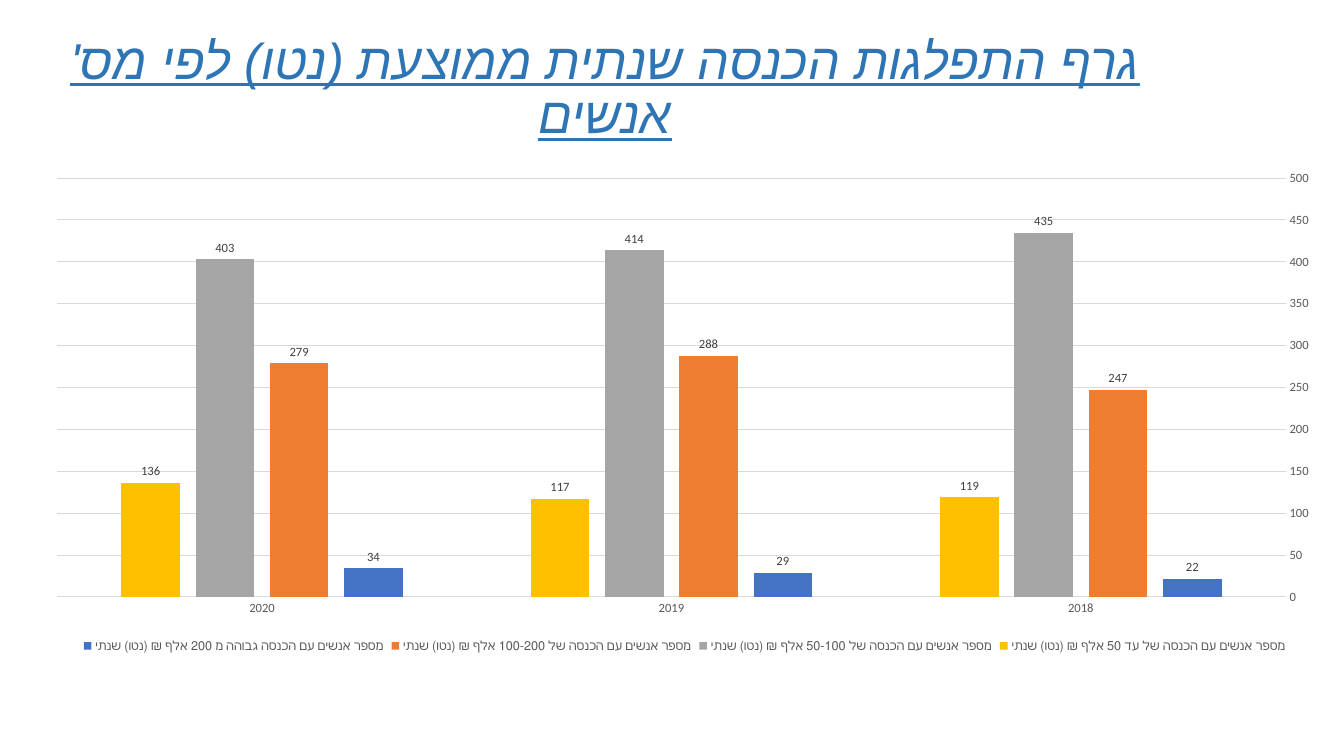
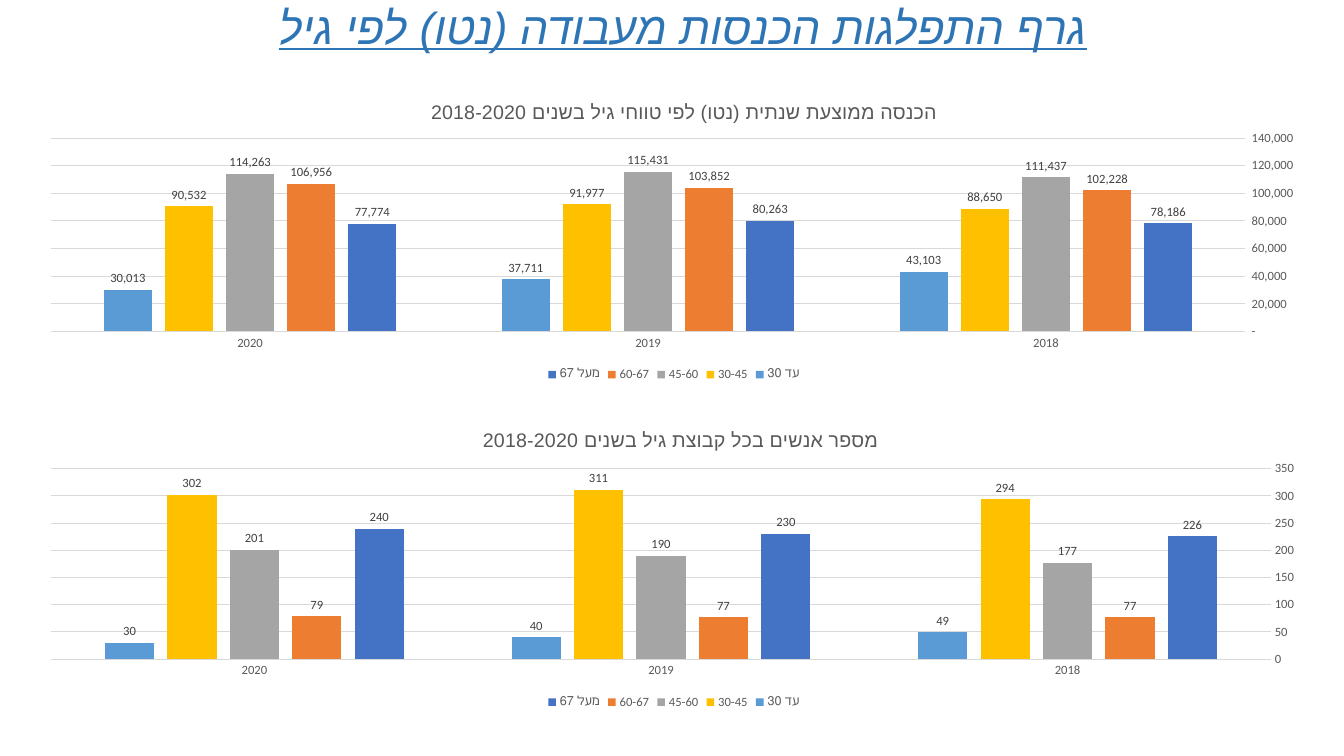
from lxml import etree
from pptx import Presentation
from pptx.chart.data import CategoryChartData
from pptx.dml.color import RGBColor
from pptx.enum.chart import (XL_CHART_TYPE, XL_LABEL_POSITION as LabelPos,
                             XL_LEGEND_POSITION as LegendPos, XL_TICK_MARK as Tick)
from pptx.enum.text import MSO_ANCHOR as Anchor, PP_ALIGN as Align
from pptx.oxml import parse_xml
from pptx.oxml.ns import nsdecls, qn
from pptx.util import Inches, Pt

FONT, HEBREW_FONT = "Calibri", "Arial"
TITLE_BLUE, TEXT_GREY, LABEL_GREY, GRID_GREY = "2E75B6", "595959", "404040", "D9D9D9"
SERIES_COLORS = ["4472C4", "ED7D31", "A5A5A5", "FFC000", "5B9BD5"]
YEARS = ["2018", "2019", "2020"]
AGE_GROUPS = ["מעל 67", "60-67", "45-60", "30-45", "עד 30"]
ACCOUNTING = '_ * #,##0_ ;_ * \\-#,##0_ ;_ * "-"??_ ;_ '

INCOME_COUNTS = {
    "מספר אנשים עם הכנסה גבוהה מ 200 אלף ₪ (נטו) שנתי": (22, 29, 34),
    "מספר אנשים עם הכנסה של 100-200 אלף ₪ (נטו) שנתי": (247, 288, 279),
    "מספר אנשים עם הכנסה של 50-100 אלף ₪ (נטו) שנתי": (435, 414, 403),
    "מספר אנשים עם הכנסה של עד 50 אלף ₪ (נטו) שנתי": (119, 117, 136),
}
AGE_INCOMES = dict(zip(AGE_GROUPS, [
    (78186, 80263, 77774), (102228, 103852, 106956), (111437, 115431, 114263),
    (88650, 91977, 90532), (43103, 37711, 30013)]))
AGE_COUNTS = dict(zip(AGE_GROUPS, [
    (226, 230, 240), (77, 77, 79), (177, 190, 201), (294, 311, 302), (49, 40, 30)]))


def rgb(hex_color):
    return RGBColor.from_string(hex_color)


def style_font(font, size, color):
    font.name, font.size = FONT, Pt(size)
    font.color.rgb = rgb(color)


def set_rtl(paragraph):
    """Right-to-left reading, with a typeface for the Hebrew letters."""
    paragraph._p.get_or_add_pPr().set("rtl", "1")
    for run in paragraph.runs:
        cs = etree.SubElement(run._r.get_or_add_rPr(), qn("a:cs"))
        cs.set("typeface", HEBREW_FONT)


def manual_layout(**fractions):
    """Layout of a chart part, as fractions of the chart area."""
    target = '<c:layoutTarget val="inner"/>' if "w" in fractions else ""
    modes = "".join(f'<c:{k}Mode val="edge"/>' for k in "xy")
    sizes = "".join(f'<c:{k} val="{v}"/>' for k, v in fractions.items())
    return parse_xml(f'<c:layout {nsdecls("c")}><c:manualLayout>{target}{modes}{sizes}'
                     '</c:manualLayout></c:layout>')


def add_heading(slide, box, text, size):
    frame = slide.shapes.add_textbox(*map(Inches, box)).text_frame
    frame.word_wrap = True
    frame.vertical_anchor = Anchor.MIDDLE
    frame.text = text
    paragraph = frame.paragraphs[0]
    paragraph.alignment = Align.CENTER
    paragraph.line_spacing, paragraph.space_after = 0.9, Pt(6)
    font = paragraph.runs[0].font
    style_font(font, size, TITLE_BLUE)
    font.italic = font.underline = True
    set_rtl(paragraph)


def add_chart_title(chart, text, left):
    frame = chart.chart_title.text_frame
    frame.text = text
    style_font(frame.paragraphs[0].runs[0].font, 14, TEXT_GREY)
    frame.paragraphs[0].runs[0].font.bold = False
    set_rtl(frame.paragraphs[0])
    title = chart.chart_title._element
    for layout in title.findall(qn("c:layout")):
        title.remove(layout)
    title.find(qn("c:tx")).addnext(manual_layout(x=left, y=0.04))


def style_axes(chart, top, step, number_format):
    years, values = chart.category_axis, chart.value_axis
    for axis in (years, values):
        axis.major_tick_mark = axis.minor_tick_mark = Tick.NONE
        style_font(axis.tick_labels.font, 9, TEXT_GREY)
    years.reverse_order = True
    values.minimum_scale, values.maximum_scale, values.major_unit = 0, top, step
    values.tick_labels.number_format = number_format
    values.tick_labels.number_format_is_linked = False
    values.format.line.fill.background()
    for line in (years.format.line, values.major_gridlines.format.line):
        line.color.rgb, line.width = rgb(GRID_GREY), Pt(0.75)


def add_columns(slide, box, data, top, step, plot_area, title=None, title_left=0,
                number_format="General"):
    chart_data = CategoryChartData(number_format=number_format)
    chart_data.categories = YEARS
    for name, values in data.items():
        chart_data.add_series(name, values)
    chart = slide.shapes.add_chart(XL_CHART_TYPE.COLUMN_CLUSTERED,
                                   *map(Inches, box), chart_data).chart
    style_font(chart.font, 10, "000000")
    chart.has_title = title is not None
    if title:
        add_chart_title(chart, title, title_left)
    style_axes(chart, top, step, number_format)

    # Legend
    chart.has_legend = True
    chart.legend.position = LegendPos.BOTTOM
    chart.legend.include_in_layout = False
    style_font(chart.legend.font, 9, TEXT_GREY)

    # Columns and their labels
    plot = chart.plots[0]
    plot.gap_width, plot.overlap, plot.vary_by_categories = 219, -27, False
    for series, color in zip(plot.series, SERIES_COLORS):
        series.format.fill.solid()
        series.format.fill.fore_color.rgb = rgb(color)
        labels = series.data_labels
        labels.show_value, labels.position = True, LabelPos.OUTSIDE_END
        style_font(labels.font, 9, LABEL_GREY)

    # Plot area
    area = chart._chartSpace.chart.plotArea
    for layout in area.findall(qn("c:layout")):
        area.remove(layout)
    area.insert(0, manual_layout(**dict(zip("xywh", plot_area))))


def build_income_slide(slide):
    add_heading(slide, (0.25, 0.17, 11.5, 1.45),
                "גרף התפלגות הכנסה שנתית ממוצעת (נטו) לפי מס' אנשים", 36)
    add_columns(slide, (0.31, 1.62, 12.96, 4.89), INCOME_COUNTS, 500, 50,
                (0.02, 0.03, 0.94, 0.85))


def build_age_slide(slide):
    add_heading(slide, (2.66, 0, 8.23, 0.59), "גרף התפלגות הכנסות מעבודה (נטו) לפי גיל", 32)
    left, width, height = 0.25, 12.87, 3
    add_columns(slide, (left, 0.83, width, height), AGE_INCOMES, 140000, 20000,
                (0.02, 0.18, 0.92, 0.64),
                "הכנסה ממוצעת שנתית (נטו) לפי טווחי גיל בשנים 2018-2020", 0.31, ACCOUNTING)
    add_columns(slide, (left, 4.08, width, height), AGE_COUNTS, 350, 50,
                (0.02, 0.19, 0.94, 0.63),
                "מספר אנשים בכל קבוצת גיל בשנים 2018-2020", 0.35)


def main():
    deck = Presentation()
    deck.slide_width, deck.slide_height = Inches(13.33), Inches(7.5)
    for build in (build_income_slide, build_age_slide):
        build(deck.slides.add_slide(deck.slide_layouts[6]))
    deck.save("out.pptx")


if __name__ == "__main__":
    main()
